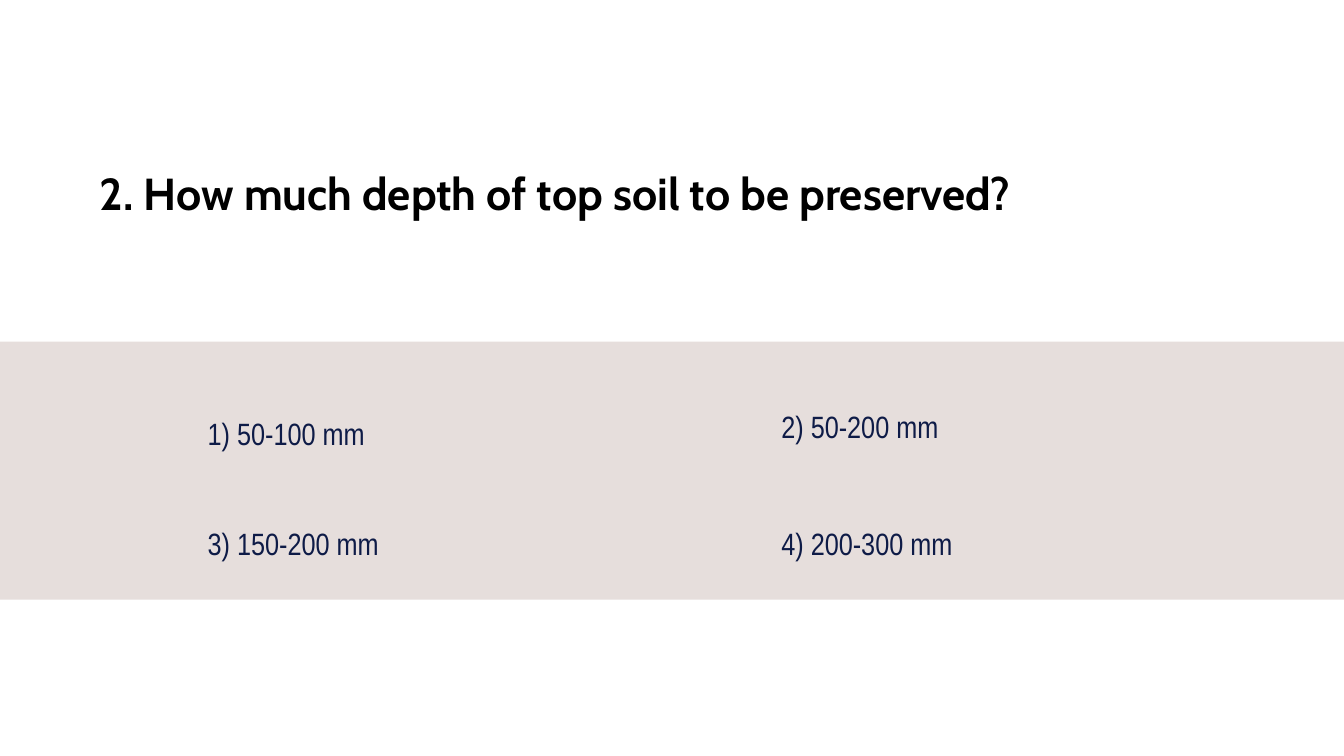
import pptx
import pptx.util
import pptx.dml.color
import pptx.enum.shapes
import pptx.enum.text

Inches = pptx.util.Inches


def color(hex_string):
    return pptx.dml.color.RGBColor.from_string(hex_string)


def add_text(text, left, top, width, height, font, size, fill, bold=False, line_spacing=1.0):
    box = slide.shapes.add_textbox(Inches(left), Inches(top), Inches(width), Inches(height))
    frame = box.text_frame
    frame.word_wrap = True
    frame.auto_size = pptx.enum.text.MSO_AUTO_SIZE.SHAPE_TO_FIT_TEXT
    frame.margin_left = frame.margin_right = Inches(0.05)
    frame.margin_top = frame.margin_bottom = Inches(0.05)
    paragraph = frame.paragraphs[0]
    paragraph.line_spacing = line_spacing
    run = paragraph.add_run()
    run.text = text
    run.font.name = font
    run.font.size = pptx.util.Pt(size)
    run.font.bold = bold
    run.font.color.rgb = color(fill)


presentation = pptx.Presentation()
presentation.slide_width = Inches(13.33)
presentation.slide_height = Inches(7.5)
slide = presentation.slides.add_slide(presentation.slide_layouts[6])

# Answer band and white corner panel
panels = [
    (0, 3.39, 13.33, 2.56, "E6DEDC"),
    (8.48, 0.27, 4.85, 0.71, "FFFFFF"),
]
for left, top, width, height, fill in panels:
    panel = slide.shapes.add_shape(
        pptx.enum.shapes.MSO_SHAPE.RECTANGLE,
        Inches(left), Inches(top), Inches(width), Inches(height))
    panel.shadow.inherit = False
    panel.fill.solid()
    panel.fill.fore_color.rgb = color(fill)
    panel.line.fill.background()

# Question
add_text("2. How much depth of top soil to be preserved?", 0.94, 1.59, 11.64, 0.64,
         font="Cabin", size=32, fill="000000", bold=True)

# Answer options
options = [
    ("1) 50-100 mm", 2.01, 3.88, 3.43),
    ("2) 50-200 mm", 7.7, 3.81, 3.23),
    ("3) 150-200 mm", 2.01, 4.97, 3.43),
    ("4) 200-300 mm", 7.7, 4.97, 3.23),
]
for text, left, top, width in options:
    add_text(text, left, top, width, 0.47,
             font="Arial Narrow", size=22, fill="0E1B47", line_spacing=1.5)

presentation.save("out.pptx")
